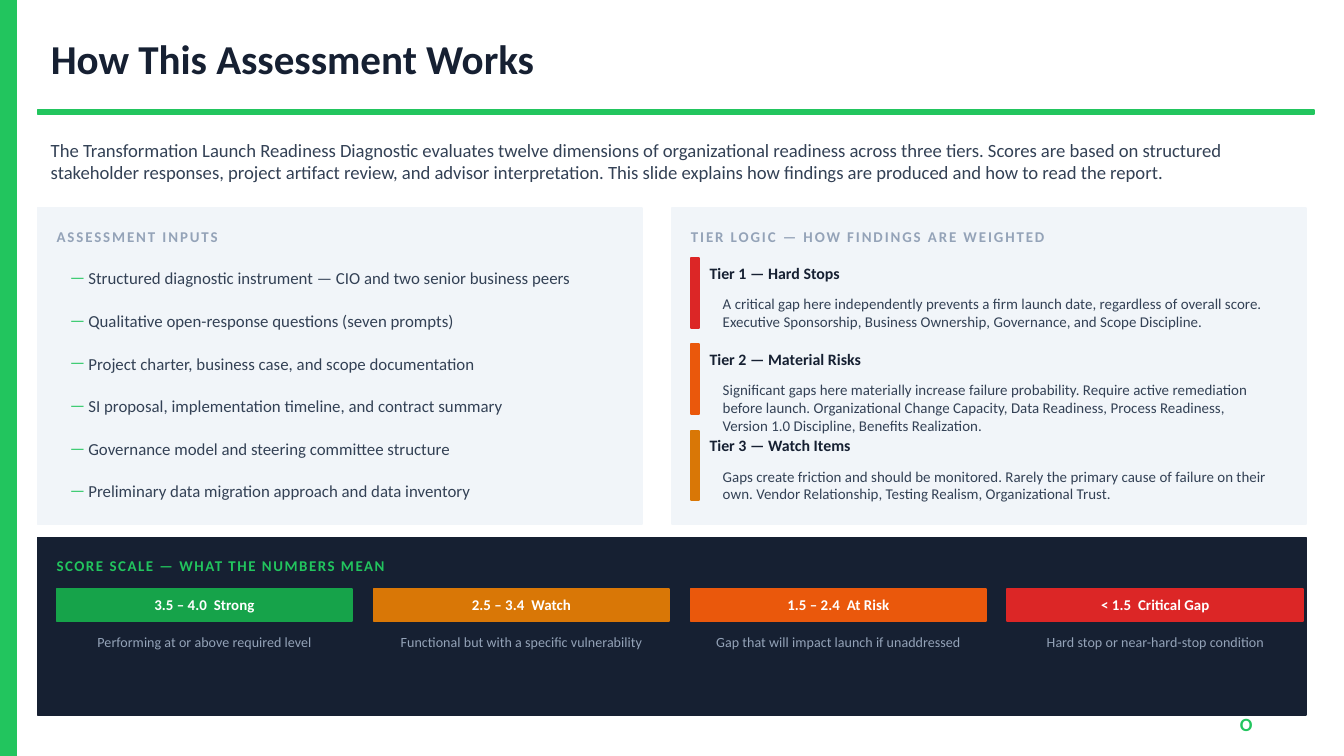
from lxml.etree import SubElement
from pptx import Presentation
from pptx.dml.color import RGBColor
from pptx.enum.shapes import MSO_SHAPE
from pptx.enum.text import MSO_ANCHOR, MSO_AUTO_SIZE, PP_ALIGN
from pptx.oxml.ns import qn
from pptx.util import Cm, Pt

COLORS = {
    "green": "22C55E", "navy": "162032", "slate": "334155", "muted": "94A3B8",
    "panel": "F1F5F9", "white": "FFFFFF", "strong": "16A34A",
    "amber": "D97706", "orange": "EA580C", "red": "DC2626",
}
INPUTS = [
    "Structured diagnostic instrument — CIO and two senior business peers",
    "Qualitative open-response questions (seven prompts)",
    "Project charter, business case, and scope documentation",
    "SI proposal, implementation timeline, and contract summary",
    "Governance model and steering committee structure",
    "Preliminary data migration approach and data inventory",
]
TIERS = [
    ("Tier 1 — Hard Stops", "red",
     "A critical gap here independently prevents a firm launch date, regardless of overall "
     "score. Executive Sponsorship, Business Ownership, Governance, and Scope Discipline."),
    ("Tier 2 — Material Risks", "orange",
     "Significant gaps here materially increase failure probability. Require active "
     "remediation before launch. Organizational Change Capacity, Data Readiness, Process "
     "Readiness, Version 1.0 Discipline, Benefits Realization."),
    ("Tier 3 — Watch Items", "amber",
     "Gaps create friction and should be monitored. Rarely the primary cause of failure on "
     "their own. Vendor Relationship, Testing Realism, Organizational Trust."),
]
SCORES = [
    ("3.5 – 4.0", "Strong", "strong", "Performing at or above required level"),
    ("2.5 – 3.4", "Watch", "amber", "Functional but with a specific vulnerability"),
    ("1.5 – 2.4", "At Risk", "orange", "Gap that will impact launch if unaddressed"),
    ("< 1.5", "Critical Gap", "red", "Hard stop or near-hard-stop condition"),
]
INTRO = (
    "The Transformation Launch Readiness Diagnostic evaluates twelve dimensions of "
    "organizational readiness across three tiers. Scores are based on structured stakeholder "
    "responses, project artifact review, and advisor interpretation. This slide explains how "
    "findings are produced and how to read the report."
)


class SlideBuilder:
    font_name = "Calibri"

    def __init__(self, slide):
        self.slide = slide

    def frame(self, shape, anchor=MSO_ANCHOR.MIDDLE, inset=False):
        side, edge = (Cm(0.25), Cm(0.13)) if inset else (Cm(0), Cm(0))
        layout = {
            "word_wrap": True, "auto_size": MSO_AUTO_SIZE.NONE, "vertical_anchor": anchor,
            "margin_left": side, "margin_right": side,
            "margin_top": edge, "margin_bottom": edge,
        }
        for attribute, value in layout.items():
            setattr(shape.text_frame, attribute, value)
        return shape.text_frame

    def run(self, paragraph, text, size, color, bold=False, tracking=0):
        """Add a run; tracking is the letter spacing in points."""
        run = paragraph.add_run()
        run.text = text
        style = {"name": self.font_name, "size": Pt(size), "bold": bold}
        for attribute, value in style.items():
            setattr(run.font, attribute, value)
        run.font.color.rgb = RGBColor.from_string(COLORS[color])
        if tracking:
            run.font._element.set("spc", str(round(tracking * 100)))

    def place(self, placeholder, box):
        """Move a placeholder to box (in cm) and to the front."""
        for attribute, value in zip(("left", "top", "width", "height"), box):
            setattr(placeholder, attribute, Cm(value))
        placeholder.element.getparent().append(placeholder.element)
        return self.frame(placeholder, inset=True)

    def title(self, box, text):
        paragraph = self.place(self.slide.shapes.title, box).paragraphs[0]
        paragraph.alignment = PP_ALIGN.LEFT
        self.run(paragraph, text, 22, "navy", bold=True)

    def dash_list(self, box, items):
        frame = self.place(self.slide.placeholders[1], box)
        indent = Cm(0.35)
        for index, item in enumerate(items):
            paragraph = frame.add_paragraph() if index else frame.paragraphs[0]
            properties = paragraph._p.get_or_add_pPr()
            properties.set("marL", str(indent))
            properties.set("indent", str(-indent))
            bullet_color = SubElement(properties, qn("a:buClr"))
            SubElement(bullet_color, qn("a:srgbClr"), val=COLORS["green"])
            SubElement(properties, qn("a:buFont"), typeface=self.font_name)
            SubElement(properties, qn("a:buChar"), char="—")
            paragraph.space_before = Pt(12 if index else 0)
            self.run(paragraph, item, 9, "slate")

    def block(self, box, color):
        shape = self.slide.shapes.add_shape(MSO_SHAPE.RECTANGLE, *map(Cm, box))
        shape.shadow.inherit = False
        shape.fill.solid()
        for paint in (shape.fill.fore_color, shape.line.color):
            paint.rgb = RGBColor.from_string(COLORS[color])
        shape.line.width = Pt(1)
        return shape

    def text(self, box, text, size, color, bold=False, tracking=0,
             align=PP_ALIGN.LEFT, anchor=MSO_ANCHOR.MIDDLE, inset=False):
        textbox = self.slide.shapes.add_textbox(*map(Cm, box))
        paragraph = self.frame(textbox, anchor, inset).paragraphs[0]
        paragraph.alignment = align
        self.run(paragraph, text, size, color, bold, tracking)

    def prose(self, box, text, size, color="slate", align=PP_ALIGN.LEFT):
        self.text(box, text, size, color, align=align, anchor=MSO_ANCHOR.TOP, inset=True)

    def tier(self, left, top, name, color, meaning):
        self.block((left, top, 0.15, 1.32), color)
        self.text((left + 0.35, top + 0.05, 10.92, 0.46), name, 8.5, "navy", bold=True)
        self.prose((left + 0.35, top + 0.56, 10.92, 0.71), meaning, 8)

    def score(self, left, top, scores, label, color, meaning):
        band = self.block((left, top, 5.59, 0.61), color)
        paragraph = self.frame(band).paragraphs[0]
        paragraph.alignment = PP_ALIGN.CENTER
        for part, tracking in ((scores, 0), (" ", 1.8), (label, 0)):
            self.run(paragraph, part, 8, "white", True, tracking)
        self.prose((left, top + 0.71, 5.59, 0.71), meaning, 7.5, "muted", PP_ALIGN.CENTER)


def main():
    deck = Presentation()
    deck.slide_width, deck.slide_height = Cm(25.4), Cm(14.29)
    builder = SlideBuilder(deck.slides.add_slide(deck.slide_layouts[1]))

    left, right = 0.71, 12.7
    padding = 0.36
    builder.block((0, 0, 0.3, 14.29), "green")
    builder.title((left, 0.46, 24.13, 1.27), "How This Assessment Works")
    builder.block((left, 2.08, 24.13, 0.08), "green")
    builder.prose((left, 2.49, 23.98, 1.27), INTRO, 10)

    panels = [
        (left, 11.43, "ASSESSMENT INPUTS"),
        (right, 11.99, "TIER LOGIC — HOW FINDINGS ARE WEIGHTED"),
    ]
    for panel_left, width, heading in panels:
        builder.block((panel_left, 3.94, width, 5.97), "panel")
        builder.text((panel_left + padding, 4.19, width - 2 * padding, 0.56),
                     heading, 8, "muted", bold=True, tracking=1)
    builder.dash_list((left + padding, 4.88, 10.67, 4.78), INPUTS)
    for index, tier in enumerate(TIERS):
        builder.tier(right + padding, 4.88 + index * 1.63, *tier)

    builder.block((left, 10.16, 23.98, 3.35), "navy")
    builder.text((left + padding, 10.41, 23.11, 0.56), "SCORE SCALE — WHAT THE NUMBERS MEAN",
                 8, "green", bold=True, tracking=0.8)
    for index, score in enumerate(SCORES):
        builder.score(left + padding + index * 5.99, 11.13, *score)
    builder.text((22.67, 13.34, 1, 0.71), "O", 10, "green", bold=True, align=PP_ALIGN.RIGHT)

    deck.save("out.pptx")


if __name__ == "__main__":
    main()
